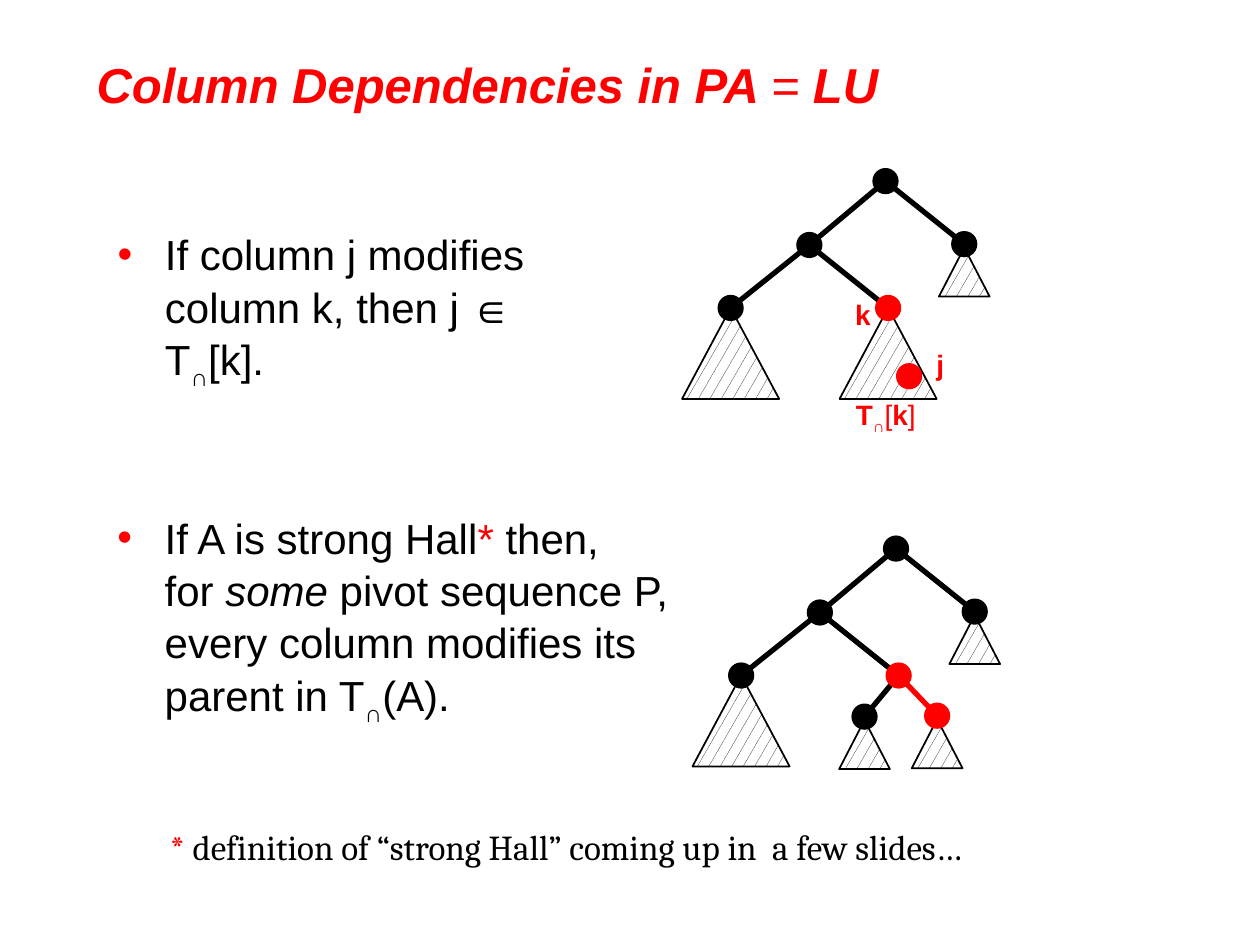
"""Build the slide on column dependencies in PA = LU with two elimination trees."""
from lxml import etree
from pptx import Presentation
from pptx.dml.color import RGBColor
from pptx.enum.dml import MSO_PATTERN
from pptx.enum.shapes import MSO_CONNECTOR, MSO_SHAPE
from pptx.enum.text import MSO_ANCHOR, MSO_AUTO_SIZE, PP_ALIGN
from pptx.oxml.ns import qn
from pptx.util import Pt

RED = RGBColor(255, 0, 0)
BLACK = RGBColor(0, 0, 0)
WHITE = RGBColor(255, 255, 255)
DOT = 15


def add_runs(p, size, font, runs):
    """Append (text, colour, style) runs; style letters are b, i and s for subscript."""
    for text, color, style in runs:
        if text == "\n":
            p.add_line_break()
            continue
        r = p.add_run()
        r.text = text
        r.font.size, r.font.name = Pt(size), font
        r.font.bold, r.font.italic = "b" in style, "i" in style
        r.font.color.rgb = color
        if "s" in style:
            r.font._element.set("baseline", "-25000")


def set_bullet(p):
    """Give a paragraph a red bullet with a hanging indent."""
    p.space_before = Pt(5)
    p.line_spacing = 1.04
    pPr = p._p.get_or_add_pPr()
    pPr.set("marL", str(Pt(27)))
    pPr.set("indent", str(-Pt(27)))
    clr = etree.SubElement(pPr, qn("a:buClr"))
    etree.SubElement(clr, qn("a:srgbClr")).set("val", str(RED))
    etree.SubElement(pPr, qn("a:buFont")).set("typeface", "Arial")
    etree.SubElement(pPr, qn("a:buChar")).set("char", "•")


prs = Presentation()
prs.slide_width, prs.slide_height = Pt(720), Pt(540)
s = prs.slides.add_slide(prs.slide_layouts[1])

title, body = s.shapes.title, s.placeholders[1]
title.left, title.top, title.width, title.height = Pt(48), Pt(24), Pt(590), Pt(48)
tf = title.text_frame
tf.auto_size = MSO_AUTO_SIZE.NONE
tf.vertical_anchor = MSO_ANCHOR.MIDDLE
tf.paragraphs[0].alignment = PP_ALIGN.LEFT
add_runs(tf.paragraphs[0], 28, "Arial", [
    ("Column Dependencies in PA ", RED, "bi"), ("=", RED, "i"), (" LU", RED, "bi")])

body.left, body.top, body.width, body.height = Pt(60), Pt(126), Pt(300), Pt(114)
hall = s.shapes.add_textbox(Pt(60), Pt(288), Pt(336), Pt(150))
statements = [
    (body, [("If column j modifies column k, then j ∈ T", BLACK, ""),
            ("∩", BLACK, "bs"), ("[k].", BLACK, "")]),
    (hall, [("If A is strong Hall", BLACK, ""), ("* ", RED, ""), ("then, ", BLACK, ""),
            ("\n", BLACK, ""), ("for ", BLACK, ""), ("some", BLACK, "i"),
            (" pivot sequence P, every column modifies its parent in T", BLACK, ""),
            ("∩", BLACK, "bs"), ("(A).", BLACK, "")]),
]
for sp, runs in statements:
    tf = sp.text_frame
    tf.word_wrap = True
    tf.auto_size = MSO_AUTO_SIZE.NONE
    set_bullet(tf.paragraphs[0])
    add_runs(tf.paragraphs[0], 24, "Arial", runs)

nodes = {"root": (506, 103.5, BLACK), "mid": (462.5, 140, BLACK),
         "right": (551, 139.5, BLACK), "left": (417.5, 176, BLACK), "k": (507.5, 176, RED)}
edges = [("root", "mid", BLACK), ("root", "right", BLACK),
         ("mid", "left", BLACK), ("mid", "k", BLACK)]
large, small = (55.5, 52), (29, 28)
subtrees = [("left", large), ("right", small)]
trees = [
    (0, 0, {"j": (519.5, 215, RED)}, [], [("k", large)]),
    (6, 210, {"child": (488, 199.5, BLACK), "parent": (529.5, 199, RED)},
     [("k", "child", BLACK), ("k", "parent", RED)], [("child", small), ("parent", small)]),
]
for dx, dy, more_nodes, more_edges, more_subtrees in trees:
    tree = {**nodes, **more_nodes}
    for name, (w, h) in subtrees + more_subtrees:
        x, y, color = tree[name]
        top = y + (0 if (w, h) == large else 2)
        sp = s.shapes.add_shape(MSO_SHAPE.ISOSCELES_TRIANGLE,
                                Pt(x + dx - w / 2), Pt(top + dy), Pt(w), Pt(h))
        sp.shadow.inherit = False
        sp.fill.patterned()
        sp.fill.pattern = MSO_PATTERN.SMALL_CONFETTI
        sp.fill.fore_color.rgb, sp.fill.back_color.rgb = BLACK, WHITE
        sp.line.color.rgb, sp.line.width = BLACK, Pt(1)
    for start, end, color in edges + more_edges:
        (x1, y1, _), (x2, y2, _) = tree[start], tree[end]
        line = s.shapes.add_connector(MSO_CONNECTOR.STRAIGHT, Pt(x1 + dx), Pt(y1 + dy),
                                      Pt(x2 + dx), Pt(y2 + dy))
        line.line.color.rgb, line.line.width = color, Pt(3)
        etree.SubElement(line._element.spPr, qn("a:effectLst"))
    for x, y, color in tree.values():
        sp = s.shapes.add_shape(MSO_SHAPE.OVAL, Pt(x + dx - DOT / 2), Pt(y + dy - DOT / 2),
                                Pt(DOT), Pt(DOT))
        sp.shadow.inherit = False
        sp.fill.solid()
        sp.fill.fore_color.rgb = color
        sp.line.fill.background()

labels = [
    (481.5, 166.5, 23, 26.5, 16, "Arial", [("k", RED, "b")]),
    (528, 195, 19, 26.5, 16, "Arial", [("j", RED, "b")]),
    (482, 223.5, 50, 26.5, 16, "Arial", [("T", RED, "b"), ("∩", RED, "bs"), ("[", RED, ""),
                                         ("k", RED, "b"), ("]", RED, "")]),
    (90, 468, 481, 31.5, 20, "Cambria", [
        ("* ", RED, ""),
        ("definition of “strong Hall” coming up in  a few slides…", BLACK, "")]),
]
for x, y, w, h, size, font, runs in labels:
    tf = s.shapes.add_textbox(Pt(x), Pt(y), Pt(w), Pt(h)).text_frame
    tf.word_wrap = False
    tf.auto_size = MSO_AUTO_SIZE.SHAPE_TO_FIT_TEXT
    add_runs(tf.paragraphs[0], size, font, runs)

prs.save("out.pptx")
